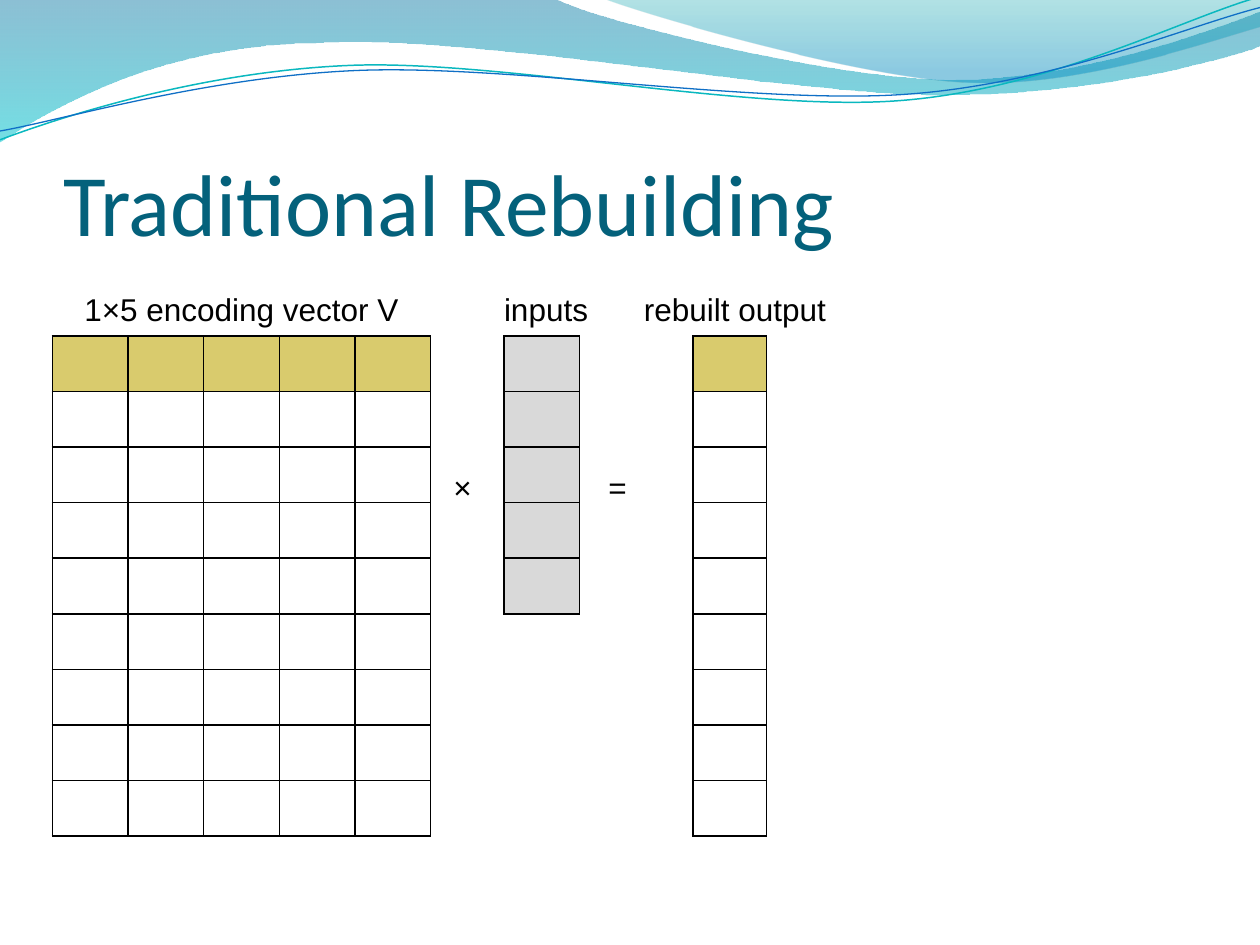
from typing import NamedTuple

from lxml import etree
from pptx import Presentation
from pptx.dml.color import RGBColor
from pptx.enum.text import MSO_ANCHOR, MSO_AUTO_SIZE, PP_ALIGN
from pptx.oxml import parse_xml
from pptx.oxml.ns import nsdecls, qn
from pptx.util import Inches, Pt

LEFT, CENTER = PP_ALIGN.LEFT, PP_ALIGN.CENTER
BOTTOM = MSO_ANCHOR.BOTTOM
GROW, FIXED = MSO_AUTO_SIZE.SHAPE_TO_FIT_TEXT, MSO_AUTO_SIZE.NONE

BLACK = RGBColor(0x00, 0x00, 0x00)
WHITE = RGBColor(0xFF, 0xFF, 0xFF)
GRAY = RGBColor(0xD9, 0xD9, 0xD9)
GOLD = RGBColor(0xD9, 0xCB, 0x6D)
NAVY = RGBColor(0x04, 0x61, 0x7B)
DEEP = RGBColor(0x00, 0x74, 0xA1)
AQUA = RGBColor(0x00, 0xC6, 0xCF)
TEAL = RGBColor(0x00, 0xA1, 0xA9)
SKY = RGBColor(0x00, 0x8B, 0xBF)
CYAN = RGBColor(0x0A, 0xB8, 0xBF)
BLUE = RGBColor(0x0F, 0x6F, 0xC6)

# Table top, row height and label lines
TOP, ROW = 8 / 3, 31.75 / 72
HEAD, MID = 2.25, 11 / 3

# Two numbers make a straight step, six make a cubic curve
Step = tuple[float, ...]


class Stop(NamedTuple):
    pos: float
    color: RGBColor
    alpha: int


class Band(NamedTuple):
    steps: list[Step]
    stops: list[Stop]


class Strand(NamedTuple):
    steps: list[Step]
    color: RGBColor
    width: float


class Label(NamedTuple):
    text: str
    left: float
    top: float
    width: float
    align: PP_ALIGN
    wrap: bool


class Grid(NamedTuple):
    left: float
    cols: int
    width: float
    fills: list[RGBColor]


BANDS = [
    Band([(0, -0.01), (4.4, -0.01),
          (4.76, 0.17, 6.64, 0.63, 7.58, 0.63),
          (8.53, 0.63, 9.58, 0.26, 10, 0.09),
          (10.01, 0.36),
          (9.83, 0.44, 8.7, 0.76, 7.46, 0.75),
          (6.22, 0.75, 3.82, 0.28, 2.57, 0.34),
          (1.29, 0.35, 0.46, 0.83, -0.01, 1.13)],
         [Stop(0, DEEP, 45), Stop(1, AQUA, 55)]),
    Band([(4.79, -0.01),
          (5.09, 0.11, 6.82, 0.62, 7.69, 0.65),
          (8.56, 0.69, 9.61, 0.32, 10, 0.21),
          (10, 0)],
         [Stop(0, TEAL, 30), Stop(0.8, SKY, 45)]),
]
STRANDS = [
    Strand([(0, 1.11),
            (0.48, 0.93, 1.58, 0.57, 2.77, 0.52),
            (3.95, 0.47, 5.93, 0.89, 7.13, 0.8),
            (8.33, 0.71, 9.38, 0.15, 9.98, -0.02)], CYAN, 0.85),
    Strand([(0, 1.04),
            (0.47, 0.96, 1.64, 0.61, 2.83, 0.56),
            (4.03, 0.51, 5.97, 0.83, 7.17, 0.75),
            (8.36, 0.67, 9.41, 0.21, 10, 0.06)], BLUE, 0.75),
]
LABELS = [
    Label("1×5 encoding vector V", 5 / 12, HEAD, 3, CENTER, True),
    Label("×", 3.5, MID, 0.35, LEFT, False),
    Label("rebuilt output", 29 / 6, HEAD, 2, CENTER, True),
    Label("inputs", MID, HEAD, 4 / 3, CENTER, True),
    Label("=", 4.73, MID, 0.35, LEFT, False),
]
GRIDS = [
    Grid(4, 1, 0.6, [GRAY] * 5),
    Grid(5 / 12, 5, 0.6, [GOLD] + [WHITE] * 8),
    Grid(5.5, 1, 7 / 12, [GOLD] + [WHITE] * 8),
]


def outline(shapes, steps: list[Step], close: bool):
    """Build a freeform, then join each three points of a curve."""
    first, *rest = [(Inches(x), Inches(y)) for step in steps
                    for x, y in zip(step[::2], step[1::2])]
    pen = shapes.build_freeform(*first)
    pen.add_line_segments(rest, close=close)
    shape = pen.convert_to_shape()
    shape.shadow.inherit = False
    lines = list(shape._element.iter(qn("a:lnTo")))
    for step in steps[1:]:
        count = len(step) // 2
        part, lines = lines[:count], lines[count:]
        if count == 3:
            curve = etree.Element(qn("a:cubicBezTo"))
            part[0].addprevious(curve)
            for line in part:
                curve.append(line[0])
                line.getparent().remove(line)
    return shape


def draw_band(shapes, band: Band) -> None:
    shape = outline(shapes, band.steps, True)
    shape.line.fill.background()
    fill = shape.fill
    fill.gradient()
    fill.gradient_angle = 270
    for stop, item in zip(fill.gradient_stops, band.stops):
        stop.position = item.pos
        stop.color.rgb = item.color
    for node, item in zip(shape._element.spPr.iter(qn("a:srgbClr")), band.stops):
        etree.SubElement(node, qn("a:alpha")).set("val", str(item.alpha * 1000))


def draw_strand(shapes, strand: Strand) -> None:
    shape = outline(shapes, strand.steps, False)
    shape.fill.background()
    shape.line.color.rgb = strand.color
    shape.line.width = Pt(strand.width)


def add_run(para, text: str, font: str, size: float, color: RGBColor) -> None:
    run = para.add_run()
    run.text = text
    run.font.name = font
    run.font.size = Pt(size)
    run.font.color.rgb = color


def draw_label(shapes, label: Label) -> None:
    box = shapes.add_textbox(Inches(label.left), Inches(label.top),
                             Inches(label.width), Inches(0.4))
    frame = box.text_frame
    frame.word_wrap = label.wrap
    frame.auto_size = GROW
    para = frame.paragraphs[0]
    para.alignment = label.align
    add_run(para, label.text, "Arial", 18, BLACK)


def paint(cell, color: RGBColor) -> None:
    """Fill a cell and rule its four sides."""
    cell.fill.solid()
    cell.fill.fore_color.rgb = color
    props = cell._tc.get_or_add_tcPr()
    for i, side in enumerate("LRTB"):
        props.insert(i, parse_xml(
            f'<a:ln{side} {nsdecls("a")} w="{Pt(1)}"><a:solidFill>'
            f'<a:srgbClr val="{BLACK}"/></a:solidFill></a:ln{side}>'))


def draw_grid(shapes, grid: Grid) -> None:
    rows = len(grid.fills)
    table = shapes.add_table(
        rows, grid.cols, Inches(grid.left), Inches(TOP),
        Inches(grid.cols * grid.width), Inches(rows * ROW)).table
    for col in table.columns:
        col.width = Inches(grid.width)
    for row, color in zip(table.rows, grid.fills):
        row.height = Inches(ROW)
        for cell in row.cells:
            paint(cell, color)


def set_title(shapes, text: str) -> None:
    title = shapes.title
    title.left, title.top = Inches(0.5), Inches(0.77)
    title.width, title.height = Inches(9), Inches(1.25)
    frame = title.text_frame
    frame.auto_size = FIXED
    frame.vertical_anchor = BOTTOM
    frame.margin_left = frame.margin_right = frame.margin_bottom = 0
    frame.margin_top = Inches(0.05)
    para = frame.paragraphs[0]
    para.alignment = LEFT
    add_run(para, text, "Calibri", 50, NAVY)
    shapes._spTree.append(title._element)


def main() -> None:
    deck = Presentation()
    deck.slide_width, deck.slide_height = Inches(10), Inches(7.5)
    shapes = deck.slides.add_slide(deck.slide_layouts[5]).shapes
    # Waves along the top, behind the title
    for band in BANDS:
        draw_band(shapes, band)
    group = shapes.add_group_shape().shapes
    for strand in STRANDS:
        draw_strand(group, strand)
    # Title, labels and matrices
    set_title(shapes, "Traditional Rebuilding")
    for label in LABELS:
        draw_label(shapes, label)
    for grid in GRIDS:
        draw_grid(shapes, grid)
    deck.save("out.pptx")


if __name__ == "__main__":
    main()
